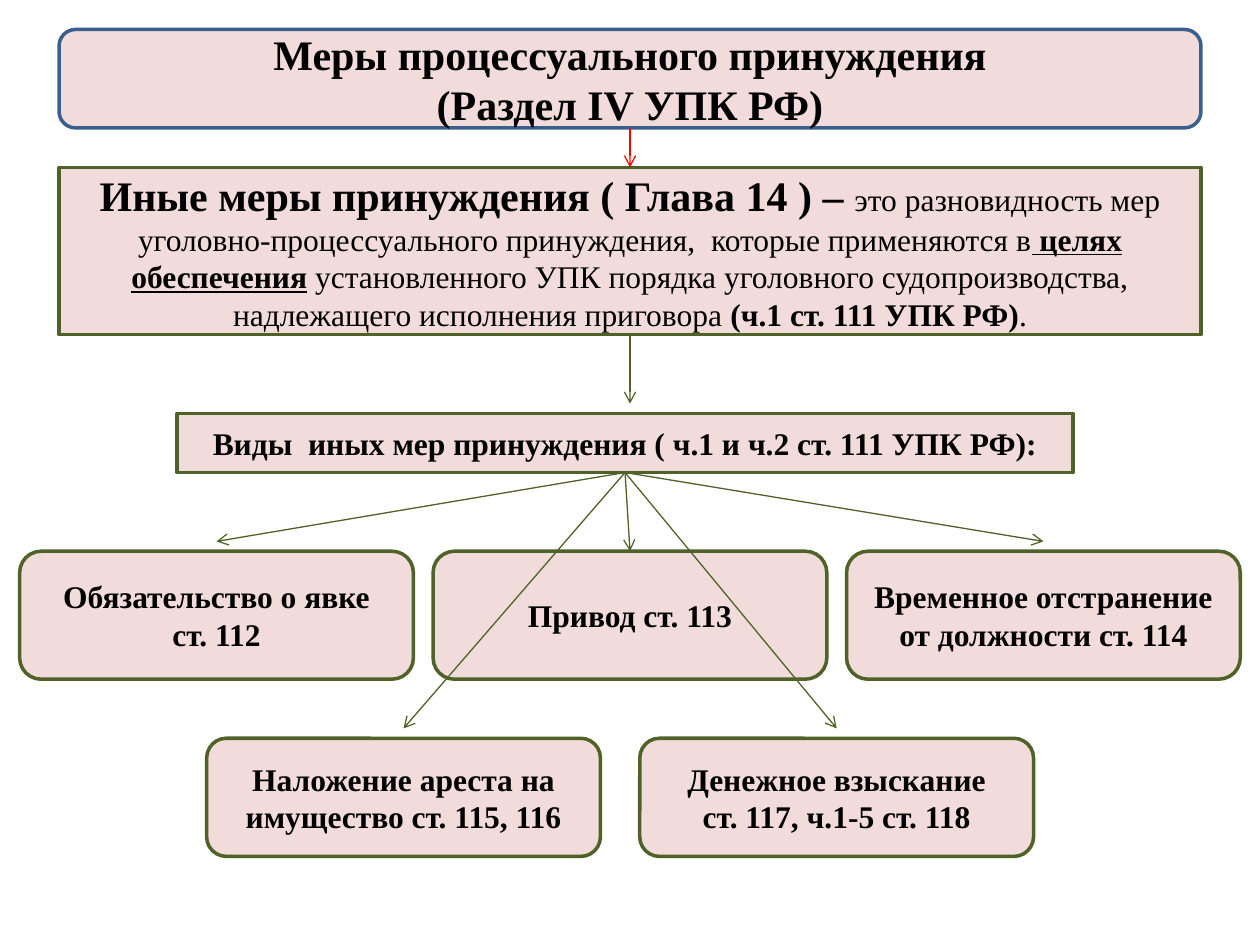
from lxml.etree import SubElement
from pptx import Presentation
from pptx.dml.color import RGBColor
from pptx.enum.shapes import MSO_CONNECTOR, MSO_SHAPE
from pptx.enum.text import MSO_ANCHOR, PP_ALIGN
from pptx.oxml.ns import qn
from pptx.util import Inches, Pt

COLORS = {"panel": "F2DCDB", "olive": "4F6228", "blue": "3A5F8C", "red": "FF0000", "text": "000000"}
FONT = "Times New Roman"
COLUMNS = 64
UNIT = Inches(10) / COLUMNS
TOP, BOTTOM = 0, 2
CARD_COLUMNS = 20

TITLE = ["Меры процессуального принуждения", "(Раздел IV УПК РФ)"]
DEFINITION = [
    ("Иные меры принуждения ( Глава 14 ) – ", 24, True, False),
    ("это разновидность мер уголовно-процессуального принуждения,  которые применяются в", 18, False, False),
    (" целях обеспечения", 18, True, True),
    (" установленного УПК порядка уголовного судопроизводства, надлежащего исполнения приговора ", 18, False, False),
    ("(ч.1 ст. 111 УПК РФ)", 18, True, False),
    (".", 18, False, False),
]
KINDS = ["Виды  иных мер принуждения ( ч.1 и ч.2 ст. 111 УПК РФ):"]
UPPER_MEASURES = [
    ["Обязательство о явке", "ст. 112"],
    ["Привод ст. 113"],
    ["Временное отстранение от должности ст. 114"],
]
LOWER_MEASURES = [
    ["Наложение ареста на имущество ст. 115, 116"],
    ["Денежное взыскание", "ст. 117, ч.1-5 ст. 118"],
]


def grid(*cells):
    """Turn columns and rows into slide lengths."""
    return [round(cell * UNIT) for cell in cells]


def color(name):
    """Look up a palette colour."""
    return RGBColor.from_string(COLORS[name])


def add_panel(slide, box, outline="olive", kind=MSO_SHAPE.RECTANGLE):
    """Draw an empty outlined panel in a grid box."""
    panel = slide.shapes.add_shape(kind, *grid(*box))
    panel.shadow.inherit = False
    panel.fill.solid()
    panel.fill.fore_color.rgb = color("panel")
    panel.line.color.rgb = color(outline)
    panel.line.width = Pt(2)
    panel.text_frame.word_wrap = True
    panel.text_frame.vertical_anchor = MSO_ANCHOR.MIDDLE
    return panel


def style_paragraph(paragraph, size, bold=None):
    """Centre a paragraph and set its font."""
    paragraph.alignment = PP_ALIGN.CENTER
    font = paragraph.font
    font.name, font.size, font.bold = FONT, Pt(size), bold
    font.color.rgb = color("text")


def add_heading(slide, box, lines, size=18, **look):
    """Draw a panel with bold lines, one paragraph each."""
    panel = add_panel(slide, box, **look)
    panel.text_frame.text = "\n".join(lines)
    for paragraph in panel.text_frame.paragraphs:
        style_paragraph(paragraph, size, True)
    return panel


def add_definition(slide, box):
    """Draw the definition panel with its mixed runs."""
    panel = add_panel(slide, box)
    paragraph = panel.text_frame.paragraphs[0]
    style_paragraph(paragraph, 18)
    for text, size, bold, underline in DEFINITION:
        run = paragraph.add_run()
        run.text = text
        run.font.size, run.font.bold, run.font.underline = Pt(size), bold, underline
    return panel


def add_arrow(slide, source, target, gap=0, hue="olive"):
    """Point from a panel's bottom to a target's top, stopping a gap short."""
    tip = target.left + target.width // 2, target.top - round(gap * UNIT)
    arrow = slide.shapes.add_connector(MSO_CONNECTOR.STRAIGHT, 0, 0, *tip)
    arrow.begin_connect(source, BOTTOM)
    if not gap:
        arrow.end_connect(target, TOP)
    style_arrow(arrow, hue)


def add_drop(slide, source, rows):
    """Draw a vertical arrow down from a panel's bottom."""
    middle, bottom = source.left + source.width // 2, source.top + source.height
    arrow = slide.shapes.add_connector(
        MSO_CONNECTOR.STRAIGHT, middle, bottom, middle, bottom + round(rows * UNIT))
    arrow.begin_connect(source, BOTTOM)
    style_arrow(arrow, "olive")


def style_arrow(arrow, hue):
    """Give a connector its colour, open head and no shadow."""
    arrow.line.color.rgb = color(hue)
    arrow.line.width = Pt(0.75)
    SubElement(arrow.line._get_or_add_ln(), qn("a:tailEnd"), type="arrow")
    SubElement(arrow._element.spPr, qn("a:effectLst"))


def add_measures(slide, box, measures, gap):
    """Lay out a row of rounded cards and return them."""
    left, top, height = box
    return [
        add_heading(slide, (left + index * (CARD_COLUMNS + gap), top, CARD_COLUMNS, height),
                    lines, kind=MSO_SHAPE.ROUNDED_RECTANGLE)
        for index, lines in enumerate(measures)
    ]


def build_slide(slide):
    """Place the scheme of coercive measures."""
    title = add_heading(slide, (3, 1.5, 58, 5), TITLE, size=24, outline="blue",
                        kind=MSO_SHAPE.ROUNDED_RECTANGLE)
    definition = add_definition(slide, (3, 8.5, 58, 8.5))
    upper = add_measures(slide, (1, 28, 6.5), UPPER_MEASURES, gap=1)
    lower = add_measures(slide, (10.5, 37.5, 6), LOWER_MEASURES, gap=2)
    kinds = add_heading(slide, (9, 21, 45.5, 3), KINDS)
    add_arrow(slide, title, definition, hue="red")
    add_drop(slide, definition, 3.5)
    obligation, bringing, suspension = upper
    add_arrow(slide, kinds, bringing)
    for card in (obligation, suspension, *lower):
        add_arrow(slide, kinds, card, gap=0.5)


def main():
    """Create and save the presentation."""
    deck = Presentation()
    deck.slide_width, deck.slide_height = Inches(10), Inches(7.5)
    build_slide(deck.slides.add_slide(deck.slide_layouts[6]))
    deck.save("out.pptx")


if __name__ == "__main__":
    main()
